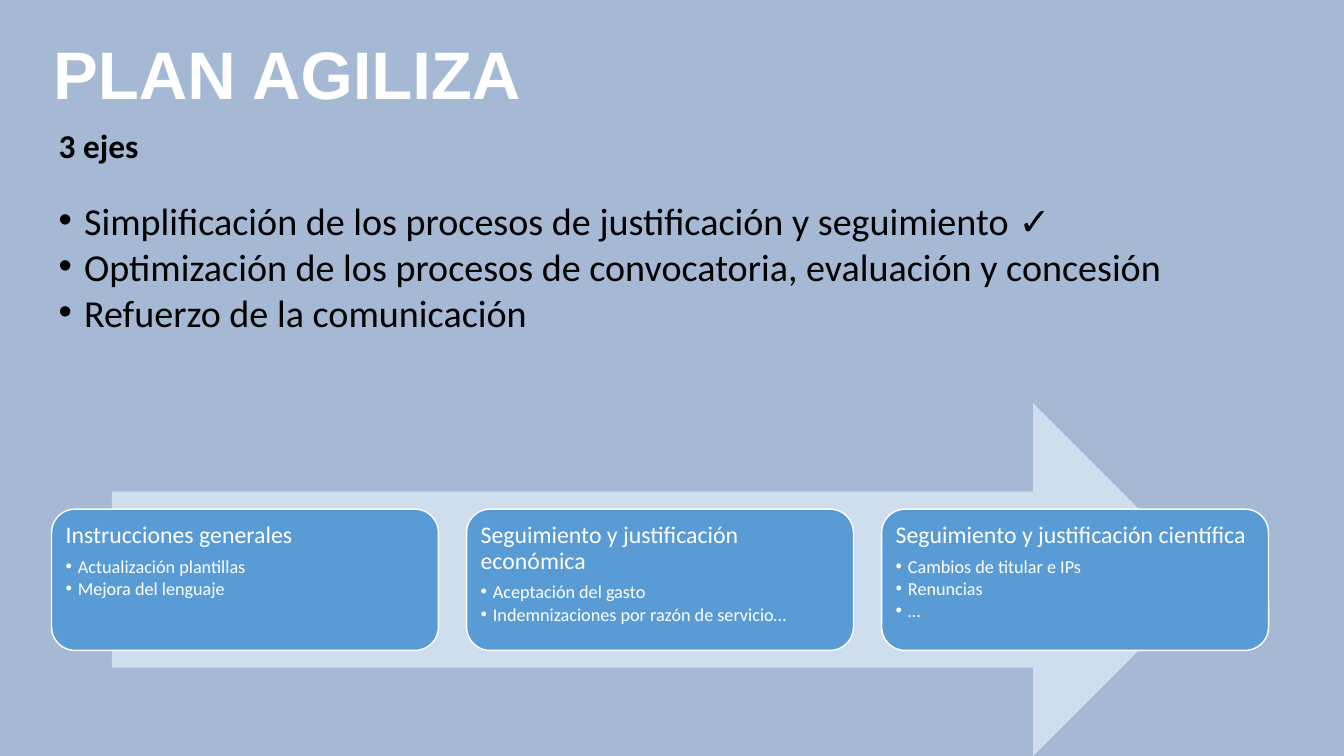
from dataclasses import dataclass
from lxml.etree import SubElement
from pptx import Presentation
from pptx.dml.color import RGBColor as Rgb
from pptx.enum.shapes import MSO_SHAPE as Kind
from pptx.enum.text import MSO_ANCHOR as Anchor, PP_ALIGN as Align
from pptx.oxml.ns import qn
from pptx.util import Cm, Pt


@dataclass(frozen=True)
class Theme:
    back: str = "A5B9D4"
    pale: str = "CFDEEF"
    blue: str = "599BD5"
    white: str = "FFFFFF"
    black: str = "000000"
    head: str = "Arial"
    body: str = "Calibri"
    title: float = 48
    lead: float = 23.8
    list: float = 27.2
    card: float = 17
    item: float = 13


THEME = Theme()
AXES = [
    "Simplificación de los procesos de justificación y seguimiento ✓",
    "Optimización de los procesos de convocatoria, evaluación y concesión",
    "Refuerzo de la comunicación",
]
CARDS = [
    ("Instrucciones generales",
     ["Actualización plantillas", "Mejora del lenguaje"]),
    ("Seguimiento y justificación económica",
     ["Aceptación del gasto", "Indemnizaciones por razón de servicio…"]),
    ("Seguimiento y justificación científica",
     ["Cambios de titular e IPs", "Renuncias", "…"]),
]


def paint(fill, tone):
    fill.solid()
    fill.fore_color.rgb = Rgb.from_string(tone)


def setup(frame, pad, anchor=Anchor.TOP):
    frame.word_wrap = True
    frame.vertical_anchor = anchor
    frame.margin_left = frame.margin_right = Cm(pad)
    frame.margin_top = frame.margin_bottom = Cm(pad)


def style(para, size, tone, font=THEME.body, bold=False, lead=0.9, gap=0):
    para.alignment = Align.LEFT
    para.line_spacing = lead
    para.space_before = Pt(gap)
    for run in para.runs:
        run.font.size = Pt(size)
        run.font.name = font
        run.font.bold = bold
        run.font.color.rgb = Rgb.from_string(tone)


def bullet(para, indent):
    props = para._p.get_or_add_pPr()
    props.set("marL", str(Cm(indent)))
    props.set("indent", str(-Cm(indent)))
    SubElement(props, qn("a:buFont"), typeface="Arial")
    SubElement(props, qn("a:buChar"), char="•")


def add_list(frame, items, indent, first, rest, **look):
    for row, item in enumerate(items):
        para = frame.add_paragraph()
        para.text = item
        style(para, gap=rest if row else first, **look)
        bullet(para, indent)


def add_title(slide, text):
    box = slide.shapes.add_textbox(Cm(1.09), Cm(0.89), Cm(29.21), Cm(2.13))
    frame = box.text_frame
    setup(frame, 0.25, Anchor.MIDDLE)
    frame.text = text
    style(frame.paragraphs[0], THEME.title, THEME.white, THEME.head, True)


def add_axes(slide, lead, items):
    box = slide.shapes.add_textbox(Cm(1.35), Cm(3.3), Cm(32.5), Cm(13.56))
    frame = box.text_frame
    setup(frame, 0.13)
    frame.text = lead
    style(frame.paragraphs[0], THEME.lead, THEME.black, bold=True, lead=0.7)
    add_list(frame, items, 0.64, 33, 10,
             size=THEME.list, tone=THEME.black, lead=0.7)


def add_shape(slide, kind, left, top, width, height, tone):
    shape = slide.shapes.add_shape(
        kind, Cm(left), Cm(top), Cm(width), Cm(height))
    shape.shadow.inherit = False
    paint(shape.fill, tone)
    shape.line.fill.background()
    return shape


def add_card(slide, left, head, items):
    card = add_shape(slide, Kind.ROUNDED_RECTANGLE,
                     left, 12.83, 9.75, 3.56, THEME.blue)
    paint(card.line.fill, THEME.white)
    card.line.width = Pt(1)
    frame = card.text_frame
    setup(frame, 0.18)
    frame.text = head
    style(frame.paragraphs[0], THEME.card, THEME.white)
    add_list(frame, items, 0.31, 6, 1.9, size=THEME.item, tone=THEME.white)


def main():
    deck = Presentation()
    deck.slide_width, deck.slide_height = Cm(33.87), Cm(19.05)
    slide = deck.slides.add_slide(deck.slide_layouts[6])
    paint(slide.background.fill, THEME.back)
    add_title(slide, "PLAN AGILIZA")
    add_axes(slide, "3 ejes", AXES)
    add_shape(slide, Kind.RIGHT_ARROW, 2.82, 10.16, 27.66, 8.89, THEME.pale)
    for col, (head, items) in enumerate(CARDS):
        add_card(slide, 1.3 + 10.46 * col, head, items)
    deck.save("out.pptx")


if __name__ == "__main__":
    main()
